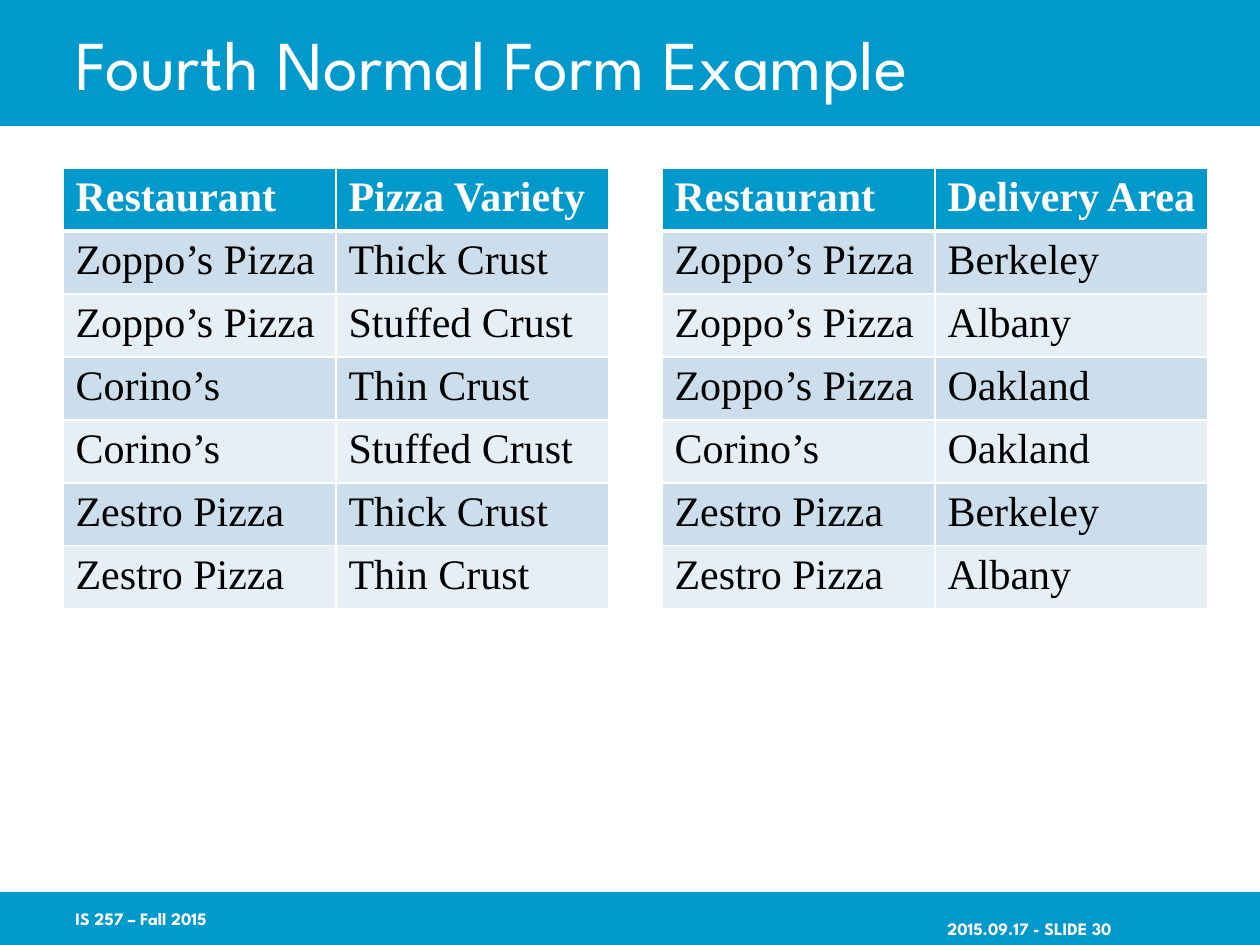
from dataclasses import dataclass

from lxml.etree import SubElement
from pptx import Presentation
from pptx.dml.color import RGBColor
from pptx.enum.shapes import MSO_SHAPE
from pptx.enum.text import MSO_ANCHOR, MSO_AUTO_SIZE, PP_ALIGN
from pptx.oxml.ns import qn
from pptx.util import Emu, Pt

PX = 914400 // 126
SLIDE_WIDTH, SLIDE_HEIGHT = 1260, 945
HEADER_HEIGHT, FOOTER_HEIGHT = 126, 53
FOOTER_TOP = SLIDE_HEIGHT - FOOTER_HEIGHT
MARGIN = 63
TABLE_TOP, COLUMN_WIDTH, ROW_HEIGHT = 168, 273, 63

VARIETIES = [
    ("Restaurant", "Pizza Variety"),
    ("Zoppo’s Pizza", "Thick Crust"),
    ("Zoppo’s Pizza", "Stuffed Crust"),
    ("Corino’s", "Thin Crust"),
    ("Corino’s", "Stuffed Crust"),
    ("Zestro Pizza", "Thick Crust"),
    ("Zestro Pizza", "Thin Crust"),
]
DELIVERY_AREAS = [
    ("Restaurant", "Delivery Area"),
    ("Zoppo’s Pizza", "Berkeley"),
    ("Zoppo’s Pizza", "Albany"),
    ("Zoppo’s Pizza", "Oakland"),
    ("Corino’s", "Oakland"),
    ("Zestro Pizza", "Berkeley"),
    ("Zestro Pizza", "Albany"),
]


@dataclass(frozen=True)
class Theme:
    accent: str = "0099CC"
    white: str = "FFFFFF"
    black: str = "000000"
    row_dark: str = "CCDEEC"
    row_light: str = "E7EFF6"
    heading_font: str = "League Spartan"
    table_font: str = "Times New Roman"
    title_size: int = 40
    table_size: int = 24
    footer_size: int = 10
    border: int = 1
    header_border: int = 3


THEME = Theme()


def px(*lengths):
    return [Emu(length * PX) for length in lengths]


def format_text(text_frame, font_name, size, color, bold=False):
    paragraph = text_frame.paragraphs[0]
    paragraph.alignment = PP_ALIGN.LEFT
    font = paragraph.runs[0].font
    font.name, font.size, font.bold = font_name, Pt(size), bold
    font.color.rgb = RGBColor.from_string(color)


def add_title(slide, text):
    title = slide.shapes.title
    title.left, title.top, title.width, title.height = px(MARGIN, 0, 1071, HEADER_HEIGHT)
    frame = title.text_frame
    frame.text = text
    frame.auto_size = MSO_AUTO_SIZE.NONE
    frame.vertical_anchor = MSO_ANCHOR.MIDDLE
    format_text(frame, THEME.heading_font, THEME.title_size, THEME.white)


def add_band(slide, top, height):
    """Add a full-width colour band behind the title."""
    band = slide.shapes.add_shape(MSO_SHAPE.RECTANGLE, *px(0, top, SLIDE_WIDTH, height))
    band.shadow.inherit = False
    band.fill.solid()
    band.fill.fore_color.rgb = RGBColor.from_string(THEME.accent)
    band.line.fill.background()
    slide.shapes.title.element.addprevious(band.element)


def add_footer_text(slide, left, text, anchor):
    box = slide.shapes.add_textbox(*px(left, FOOTER_TOP, 262, FOOTER_HEIGHT))
    frame = box.text_frame
    frame.word_wrap = True
    frame.margin_right = 0
    frame.vertical_anchor = anchor
    frame.text = text
    format_text(frame, THEME.heading_font, THEME.footer_size, THEME.white, bold=True)


def set_borders(cell, top, bottom):
    properties = cell._tc.get_or_add_tcPr()
    widths = {"a:lnL": THEME.border, "a:lnR": THEME.border, "a:lnT": top, "a:lnB": bottom}
    for tag, width in widths.items():
        line = SubElement(properties, qn(tag), w=str(Pt(width)))
        fill = SubElement(line, qn("a:solidFill"))
        SubElement(fill, qn("a:srgbClr"), val=THEME.white)


def format_cell(cell, row_index):
    is_header = row_index == 0
    top = THEME.header_border if row_index == 1 else THEME.border
    bottom = THEME.header_border if is_header else THEME.border
    set_borders(cell, top, bottom)
    if is_header:
        fill_color, text_color = THEME.accent, THEME.white
    else:
        fill_color = THEME.row_dark if row_index % 2 else THEME.row_light
        text_color = THEME.black
    cell.fill.solid()
    cell.fill.fore_color.rgb = RGBColor.from_string(fill_color)
    format_text(cell.text_frame, THEME.table_font, THEME.table_size, text_color, is_header)


def add_relation_table(slide, left, rows):
    column_count = len(rows[0])
    bounds = px(left, TABLE_TOP, column_count * COLUMN_WIDTH, len(rows) * ROW_HEIGHT)
    table = slide.shapes.add_table(len(rows), column_count, *bounds).table
    for row_index, row in enumerate(rows):
        for column_index, text in enumerate(row):
            cell = table.cell(row_index, column_index)
            cell.text = text
            format_cell(cell, row_index)


def main():
    presentation = Presentation()
    presentation.slide_width, presentation.slide_height = px(SLIDE_WIDTH, SLIDE_HEIGHT)
    slide = presentation.slides.add_slide(presentation.slide_layouts[5])
    add_band(slide, 0, HEADER_HEIGHT)
    add_band(slide, FOOTER_TOP, FOOTER_HEIGHT)
    add_title(slide, "Fourth Normal Form Example")
    add_relation_table(slide, MARGIN, VARIETIES)
    add_relation_table(slide, 662, DELIVERY_AREAS)
    add_footer_text(slide, MARGIN, "IS 257 – Fall 2015", MSO_ANCHOR.MIDDLE)
    add_footer_text(slide, 935, "2015.09.17 - SLIDE 30", MSO_ANCHOR.BOTTOM)
    presentation.save("out.pptx")


if __name__ == "__main__":
    main()
